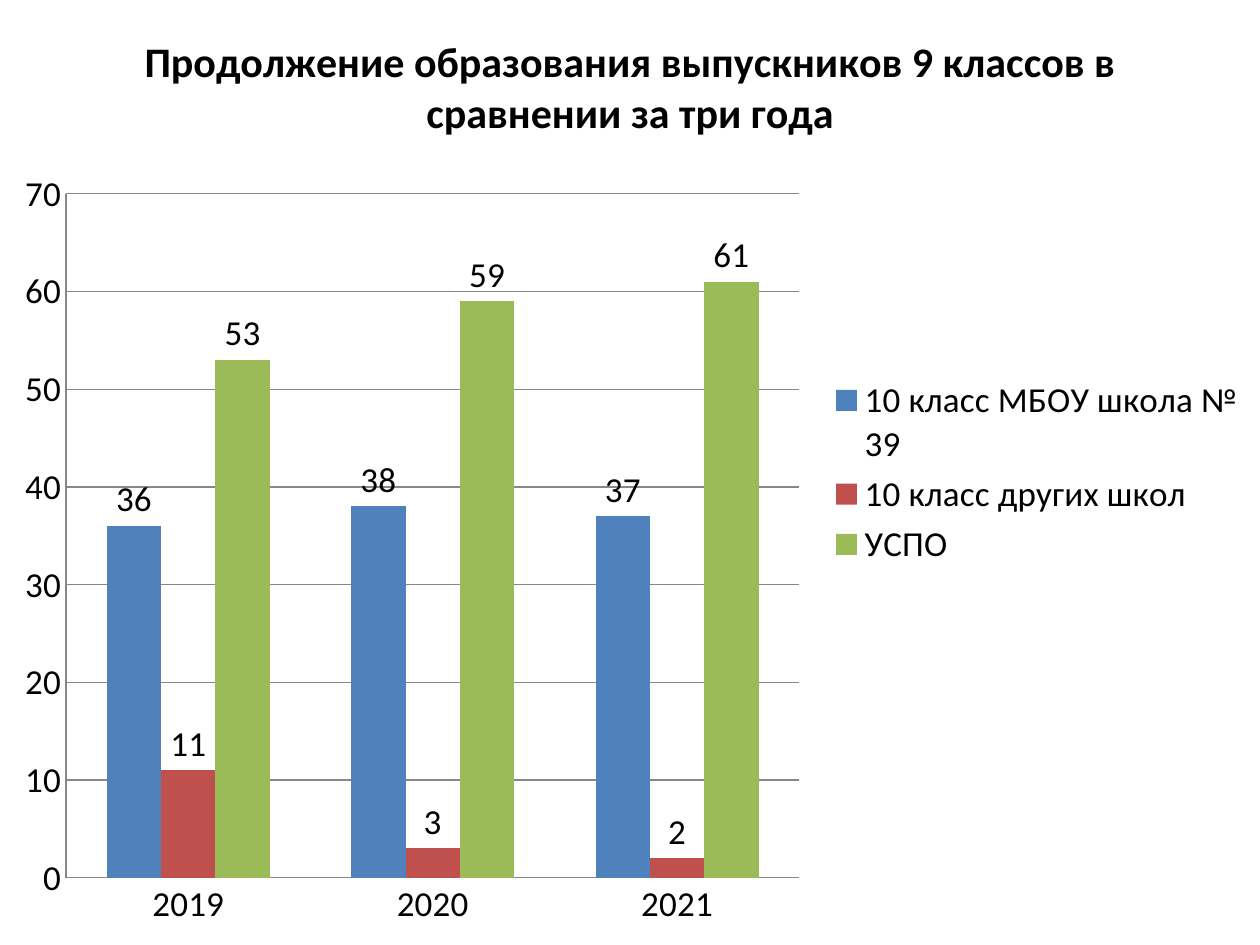
"""Build a slide with a clustered column chart of where ninth-grade graduates continue their education."""
from dataclasses import dataclass

from pptx import Presentation
from pptx.chart.data import CategoryChartData
from pptx.dml.color import RGBColor
from pptx.enum.chart import XL_CHART_TYPE, XL_LABEL_POSITION, XL_LEGEND_POSITION, XL_TICK_MARK
from pptx.util import Cm, Pt

COLUMNS = XL_CHART_TYPE.COLUMN_CLUSTERED
LABELS_ABOVE = XL_LABEL_POSITION.OUTSIDE_END
LEGEND_RIGHT = XL_LEGEND_POSITION.RIGHT
NO_TICKS = XL_TICK_MARK.NONE

SLIDE_WIDTH, SLIDE_HEIGHT = Cm(25.4), Cm(19.05)
TITLE = "Продолжение образования выпускников 9 классов в сравнении за три года"
YEARS = ("2019", "2020", "2021")
GRADUATES = {
    "10 класс МБОУ школа № 39": (36, 38, 37),
    "10 класс других школ": (11, 3, 2),
    "УСПО": (53, 59, 61),
}


@dataclass(frozen=True)
class Theme:
    font: str = "Calibri"
    title_size: int = 24
    text_size: int = 20
    text: str = "000000"
    line: str = "878787"
    series: tuple = ("4F81BD", "C0504D", "9BBB59")


class SlideBuilder:
    def __init__(self, slide, theme):
        self.slide = slide
        self.theme = theme

    def set_font(self, font, size, bold=False):
        font.name = self.theme.font
        font.size = Pt(size)
        font.bold = bold
        font.color.rgb = RGBColor.from_string(self.theme.text)

    def set_line(self, line):
        line.width = Pt(0.75)
        line.color.rgb = RGBColor.from_string(self.theme.line)

    def add_title(self, chart, title):
        chart.has_title = True
        text_frame = chart.chart_title.text_frame
        text_frame.text = title
        self.set_font(text_frame.paragraphs[0].font, self.theme.title_size, bold=True)
        chart.chart_title.include_in_layout = False

    def add_legend(self, chart):
        chart.has_legend = True
        chart.legend.position = LEGEND_RIGHT
        chart.legend.include_in_layout = False

    def style_axes(self, chart):
        for axis in (chart.category_axis, chart.value_axis):
            axis.major_tick_mark = axis.minor_tick_mark = NO_TICKS
            self.set_line(axis.format.line)
        chart.value_axis.has_major_gridlines = True
        self.set_line(chart.value_axis.major_gridlines.format.line)
        chart.value_axis.minimum_scale = 0
        chart.value_axis.maximum_scale = 70
        chart.value_axis.major_unit = 10

    def style_columns(self, plot):
        plot.gap_width = 150
        plot.vary_by_categories = False
        for series, color in zip(plot.series, self.theme.series):
            series.format.fill.solid()
            series.format.fill.fore_color.rgb = RGBColor.from_string(color)
            series.data_labels.show_value = True
            series.data_labels.position = LABELS_ABOVE

    def add_column_chart(self, title, categories, values, left, top, width, height):
        chart_data = CategoryChartData()
        chart_data.categories = categories
        for name, numbers in values.items():
            chart_data.add_series(name, numbers)
        chart = self.slide.shapes.add_chart(COLUMNS, left, top, width, height, chart_data).chart
        self.set_font(chart.font, self.theme.text_size)
        self.add_title(chart, title)
        self.add_legend(chart)
        self.style_axes(chart)
        self.style_columns(chart.plots[0])


def main():
    presentation = Presentation()
    presentation.slide_width, presentation.slide_height = SLIDE_WIDTH, SLIDE_HEIGHT
    slide = presentation.slides.add_slide(presentation.slide_layouts[6])
    builder = SlideBuilder(slide, Theme())
    builder.add_column_chart(TITLE, YEARS, GRADUATES, Cm(0), Cm(0), SLIDE_WIDTH, SLIDE_HEIGHT)
    presentation.save("out.pptx")


if __name__ == "__main__":
    main()
